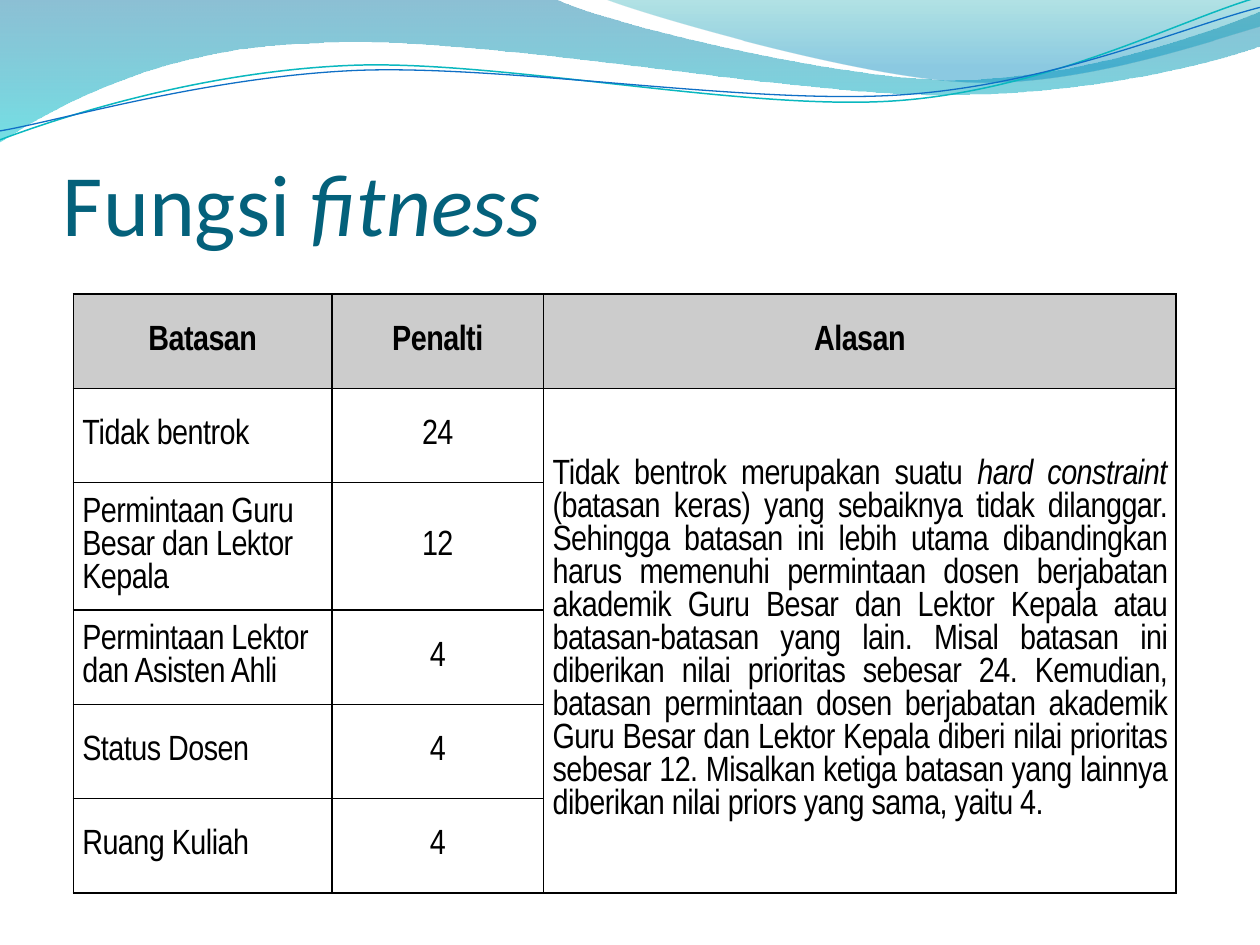
from dataclasses import dataclass

from lxml.etree import SubElement
from pptx import Presentation
from pptx.dml.color import RGBColor as Rgb
from pptx.enum.text import MSO_ANCHOR as Anchor, PP_ALIGN as Align
from pptx.oxml.ns import qn
from pptx.util import Cm, Pt


@dataclass(frozen=True)
class Theme:
    title_font: str = "Calibri"
    title_size: float = 50
    title_color: str = "04617B"
    table_font: str = "Arial Narrow"
    table_size: float = 20
    ink: str = "000000"
    header_fill: str = "CCCCCC"
    border: float = 1
    tracking: int = -30


THEME = Theme()

TITLE = [("Fungsi ", False), ("fitness", True)]
HEADERS = ["Batasan", "Penalti", "Alasan"]
PENALTIES = [
    ("Tidak bentrok", "24"),
    ("Permintaan Guru Besar dan Lektor Kepala", "12"),
    ("Permintaan Lektor dan Asisten Ahli", "4"),
    ("Status Dosen", "4"),
    ("Ruang Kuliah", "4"),
]
REASON = [
    ("Tidak bentrok merupakan suatu ", False),
    ("hard constraint", True),
    (" (batasan keras) yang sebaiknya tidak dilanggar. Sehingga batasan ini lebih utama "
     "dibandingkan harus memenuhi permintaan dosen berjabatan akademik Guru Besar dan "
     "Lektor Kepala atau batasan-batasan yang lain. Misal batasan ini diberikan nilai "
     "prioritas sebesar 24. Kemudian, batasan permintaan dosen berjabatan akademik Guru "
     "Besar dan Lektor Kepala diberi nilai prioritas sebesar 12. Misalkan ketiga batasan "
     "yang lainnya diberikan nilai priors yang sama, yaitu 4.", False),
]
COLUMN_WIDTHS = [5.21, 4.27, 12.75]
ROW_HEIGHTS = [1.9, 1.9, 2.57, 1.9, 1.9, 1.9]

WAVES = [
    {"start": (0, 0),
     "steps": [(11.18, -0.03),
               (12.09, 0.43, 16.87, 1.6, 19.25, 1.6),
               (21.67, 1.6, 24.33, 0.66, 25.4, 0.23),
               (25.43, 0.91),
               (24.97, 1.12, 22.1, 1.93, 18.95, 1.91),
               (15.8, 1.91, 9.7, 0.71, 6.53, 0.86),
               (3.28, 0.91, 1.17, 2.11, -0.03, 2.87),
               (0, 0)],
     "stops": [(0, "0074A1", 45), (1, "00C6CF", 55)]},
    {"start": (12.17, -0.03),
     "steps": [(12.93, 0.28, 17.32, 1.57, 19.53, 1.65),
               (21.74, 1.75, 24.41, 0.81, 25.4, 0.53),
               (25.4, 0),
               (12.17, -0.03)],
     "stops": [(0, "00A1A9", 30), (0.8, "008BBF", 45)]},
    {"start": (0, 2.82),
     "steps": [(1.22, 2.36, 4.01, 1.45, 7.04, 1.32),
               (10.03, 1.19, 15.06, 2.26, 18.11, 2.03),
               (21.16, 1.8, 23.83, 0.38, 25.35, -0.05)],
     "line": ("0AB8BF", 0.85)},
    {"start": (0, 2.64),
     "steps": [(1.19, 2.44, 4.17, 1.55, 7.19, 1.42),
               (10.24, 1.3, 15.16, 2.13, 18.21, 1.91),
               (21.23, 1.7, 23.9, 0.53, 25.4, 0.15)],
     "line": ("0F6FC6", 0.75)},
]


def draw_outline(slide, wave):
    x, y = wave["start"]
    outline = slide.shapes.build_freeform(Cm(x), Cm(y))
    corners = [(Cm(step[-2]), Cm(step[-1])) for step in wave["steps"]]
    outline.add_line_segments(corners, close="stops" in wave)
    ribbon = outline.convert_to_shape()
    segments = list(ribbon.element.spPr.iter(qn("a:lnTo")))
    for segment, step in zip(segments, wave["steps"]):
        if len(step) == 2:
            continue
        curve = SubElement(segment.getparent(), qn("a:cubicBezTo"))
        for across, down in zip(step[::2], step[1::2]):
            SubElement(curve, qn("a:pt"), x=str(Cm(across) - ribbon.left),
                       y=str(Cm(down) - ribbon.top))
        segment.getparent().replace(segment, curve)
    return ribbon


def add_wave(slide, wave):
    ribbon = draw_outline(slide, wave)
    ribbon.shadow.inherit = False
    if "line" in wave:
        color, width = wave["line"]
        ribbon.fill.background()
        ribbon.line.color.rgb = Rgb.from_string(color)
        ribbon.line.width = Pt(width)
        return
    ribbon.line.fill.background()
    ribbon.fill.gradient()
    ribbon.fill.gradient_angle = 270
    for stop, (position, color, _) in zip(ribbon.fill.gradient_stops, wave["stops"]):
        stop.position = position
        stop.color.rgb = Rgb.from_string(color)
    tints = ribbon.element.spPr.iter(qn("a:srgbClr"))
    for tint, (_, _, opacity) in zip(tints, wave["stops"]):
        SubElement(tint, qn("a:alpha"), val=str(opacity * 1000))


def add_runs(paragraph, pieces, font, size, color, bold=False, tracking=0):
    for words, italic in pieces:
        run = paragraph.add_run()
        run.text = words
        run.font.name, run.font.size = font, Pt(size)
        run.font.bold, run.font.italic = bold, italic
        run.font.color.rgb = Rgb.from_string(color)
        if tracking:
            run.font._element.set("spc", str(tracking))


def add_title(slide):
    heading = slide.shapes.add_textbox(Cm(1.27), Cm(1.95), Cm(22.86), Cm(3.17)).text_frame
    heading.word_wrap = True
    heading.vertical_anchor = Anchor.BOTTOM
    heading.margin_left = heading.margin_right = heading.margin_bottom = 0
    heading.margin_top = Cm(0.13)
    add_runs(heading.paragraphs[0], TITLE, THEME.title_font, THEME.title_size,
             THEME.title_color)


def style_cell(cell, header):
    properties = cell._tc.get_or_add_tcPr()
    for side in ("lnL", "lnR", "lnT", "lnB"):
        edge = SubElement(properties, qn(f"a:{side}"), w=str(Pt(THEME.border)))
        SubElement(SubElement(edge, qn("a:solidFill")), qn("a:srgbClr"), val=THEME.ink)
    if header:
        cell.fill.solid()
        cell.fill.fore_color.rgb = Rgb.from_string(THEME.header_fill)
    else:
        cell.fill.background()
    cell.vertical_anchor = Anchor.MIDDLE
    cell.margin_left = cell.margin_right = Cm(0.18)
    cell.margin_top = cell.margin_bottom = 0


def write_cell(cell, pieces, align, bold=False):
    paragraph = cell.text_frame.paragraphs[0]
    paragraph.alignment = align
    paragraph.space_before, paragraph.space_after = Pt(3), Pt(6)
    add_runs(paragraph, pieces, THEME.table_font, THEME.table_size, THEME.ink, bold,
             THEME.tracking)


def add_penalty_table(slide):
    grid = slide.shapes.add_table(
        len(ROW_HEIGHTS), len(COLUMN_WIDTHS), Cm(1.48), Cm(5.93),
        Cm(sum(COLUMN_WIDTHS)), Cm(sum(ROW_HEIGHTS))).table
    grid.first_row = grid.horz_banding = False
    for column, width in zip(grid.columns, COLUMN_WIDTHS):
        column.width = Cm(width)
    for r, height in enumerate(ROW_HEIGHTS):
        grid.rows[r].height = Cm(height)
        for c in range(len(COLUMN_WIDTHS)):
            style_cell(grid.cell(r, c), header=r == 0)
    grid.cell(1, 2).merge(grid.cell(len(PENALTIES), 2))
    for c, header in enumerate(HEADERS):
        write_cell(grid.cell(0, c), [(header, False)], Align.CENTER, bold=True)
    for r, (constraint, penalty) in enumerate(PENALTIES, 1):
        write_cell(grid.cell(r, 0), [(constraint, False)], Align.LEFT)
        write_cell(grid.cell(r, 1), [(penalty, False)], Align.CENTER)
    write_cell(grid.cell(1, 2), REASON, Align.JUSTIFY)


def main():
    """Build the fitness function slide with its penalty table."""
    deck = Presentation()
    deck.slide_width, deck.slide_height = Cm(25.4), Cm(19.05)
    slide = deck.slides.add_slide(deck.slide_layouts[6])
    for wave in WAVES:
        add_wave(slide, wave)
    add_title(slide)
    add_penalty_table(slide)
    deck.save("out.pptx")


if __name__ == "__main__":
    main()
